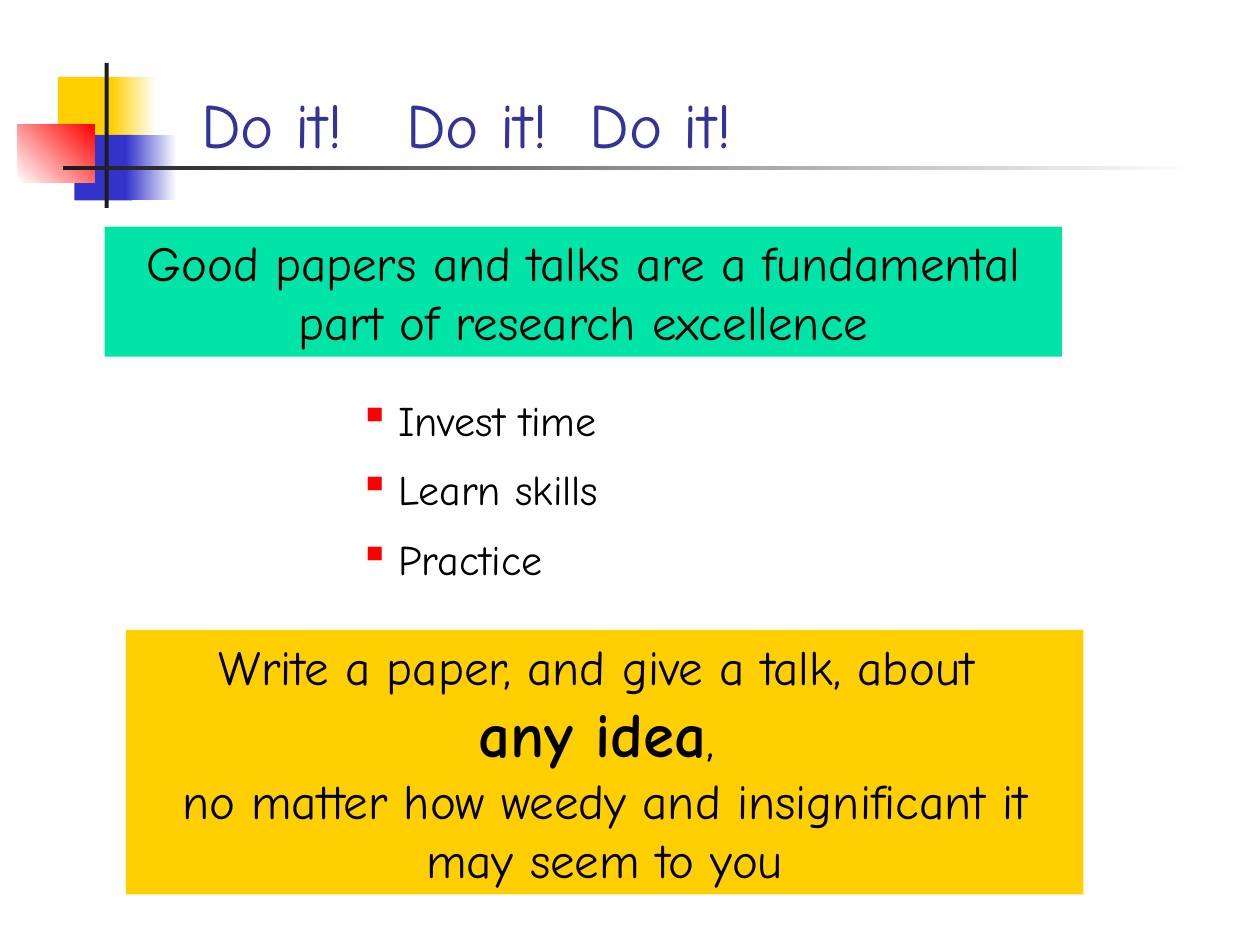
"""Build the "Do it!" slide: ornament, title, two banners and a bullet list."""
from typing import NamedTuple, Optional

from lxml import etree
from pptx import Presentation
from pptx import util as u
from pptx.dml.color import RGBColor
from pptx.enum import shapes, text as t
from pptx.oxml.ns import qn

FONT = "Comic Neue"
COLORS = {
    "gold": "FFCF01",
    "blue": "3333CC",
    "red": "FF0000",
    "ink": "1C1C1C",
    "white": "FFFFFF",
    "green": "00E4A8",
    "title": "333399",
    "black": "000000",
}


class Block(NamedTuple):
    left: float
    top: float
    width: float
    height: float
    color: str
    fade_to: Optional[str] = None
    angle: float = 0


class Span(NamedTuple):
    text: str
    size: float = 28
    bold: bool = False


class Banner(NamedTuple):
    block: Block
    spans: tuple[Span, ...]


ORNAMENT = (
    Block(1.17, 1.55, 1.22, 1.32, "gold"),
    Block(2.24, 1.55, 0.91, 1.32, "gold", "white"),
    Block(1.5, 2.72, 1.17, 1.32, "blue"),
    Block(2.54, 2.72, 1.02, 1.32, "blue", "white"),
    Block(0.36, 2.51, 1.55, 1.17, "white", "red", 45),
    Block(2.11, 1.27, 0.08, 2.92, "ink"),
    Block(1.27, 3.35, 22.86, 0.08, "ink", "white"),
)
BANNERS = (
    Banner(
        Block(2.11, 4.57, 19.3, 2.62, "green"),
        (Span("Good papers and talks are a fundamental part of research excellence"),),
    ),
    Banner(
        Block(2.54, 12.7, 19.3, 5.33, "gold"),
        (
            Span("Write a paper, and give a talk, about \n"),
            Span("any idea", 36, True),
            Span(", \nno matter how weedy and insignificant it may seem to you"),
        ),
    ),
)
ADVICE = ("Invest time", "Learn skills", "Practice")


def rgb(name: str) -> RGBColor:
    """Return the named colour."""
    return RGBColor.from_string(COLORS[name])


def draw_block(page, block: Block):
    """Draw a rectangle with a solid or fading fill."""
    shape = page.shapes.add_shape(
        shapes.MSO_SHAPE.RECTANGLE, *(u.Cm(length) for length in block[:4])
    )
    shape.shadow.inherit = False
    shape.line.fill.background()
    if block.fade_to:
        shape.fill.gradient()
        shape.fill.gradient_angle = block.angle
        for stop, name in zip(shape.fill.gradient_stops, (block.color, block.fade_to)):
            stop.color.rgb = rgb(name)
    else:
        shape.fill.solid()
        shape.fill.fore_color.rgb = rgb(block.color)
    return shape


def write(para, text: str, *, size: float, color: str = "black", bold: bool = False) -> None:
    """Add formatted text to a paragraph, breaking lines at newlines."""
    for index, line in enumerate(text.split("\n")):
        if index:
            para.add_line_break()
        if line:
            span = para.add_run()
            span.text = line
            span.font.name = FONT
            span.font.size = u.Pt(size)
            span.font.bold = bold
            span.font.color.rgb = rgb(color)


def add_bullet(para, mark: str, color: str, indent: u.Length) -> None:
    """Give a paragraph a coloured bullet and a hanging indent."""
    props = para._p.get_or_add_pPr()
    props.set("marL", str(indent))
    props.set("indent", str(-indent))
    tint = etree.SubElement(props, qn("a:buClr"))
    etree.SubElement(tint, qn("a:srgbClr")).set("val", COLORS[color])
    etree.SubElement(props, qn("a:buChar")).set("char", mark)


def draw_banner(page, banner: Banner) -> None:
    """Draw a filled banner with centred text."""
    frame = draw_block(page, banner.block).text_frame
    frame.word_wrap = True
    frame.auto_size = t.MSO_AUTO_SIZE.SHAPE_TO_FIT_TEXT
    frame.vertical_anchor = t.MSO_ANCHOR.TOP
    para = frame.paragraphs[0]
    para.alignment = t.PP_ALIGN.CENTER
    for span in banner.spans:
        write(para, span.text, size=span.size, bold=span.bold)


def draw_title(page, title: str) -> None:
    """Draw the title above the rule."""
    box = page.shapes.add_textbox(u.Cm(3.81), u.Cm(0.2), u.Cm(21.64), u.Cm(3.18))
    box.text_frame.word_wrap = True
    box.text_frame.vertical_anchor = t.MSO_ANCHOR.BOTTOM
    write(box.text_frame.paragraphs[0], title, size=36, color="title")


def draw_list(page, items: tuple[str, ...]) -> None:
    """Draw the bullet list."""
    box = page.shapes.add_textbox(u.Cm(6.99), u.Cm(7.82), u.Cm(7.82), u.Cm(4.11))
    frame = box.text_frame
    frame.word_wrap = True
    frame.auto_size = t.MSO_AUTO_SIZE.SHAPE_TO_FIT_TEXT
    for index, item in enumerate(items):
        para = frame.add_paragraph() if index else frame.paragraphs[0]
        para.space_before = u.Pt(11)
        add_bullet(para, "▪", "red", u.Cm(0.79))
        write(para, item, size=24)


def main() -> None:
    """Build and save the deck."""
    deck = Presentation()
    deck.slide_width, deck.slide_height = u.Cm(25.4), u.Cm(19.05)
    page = deck.slides.add_slide(deck.slide_layouts[6])
    for block in ORNAMENT:
        draw_block(page, block)
    draw_title(page, "Do it!   Do it!  Do it!")
    upper, lower = BANNERS
    draw_banner(page, upper)
    draw_list(page, ADVICE)
    draw_banner(page, lower)
    deck.save("out.pptx")


if __name__ == "__main__":
    main()
